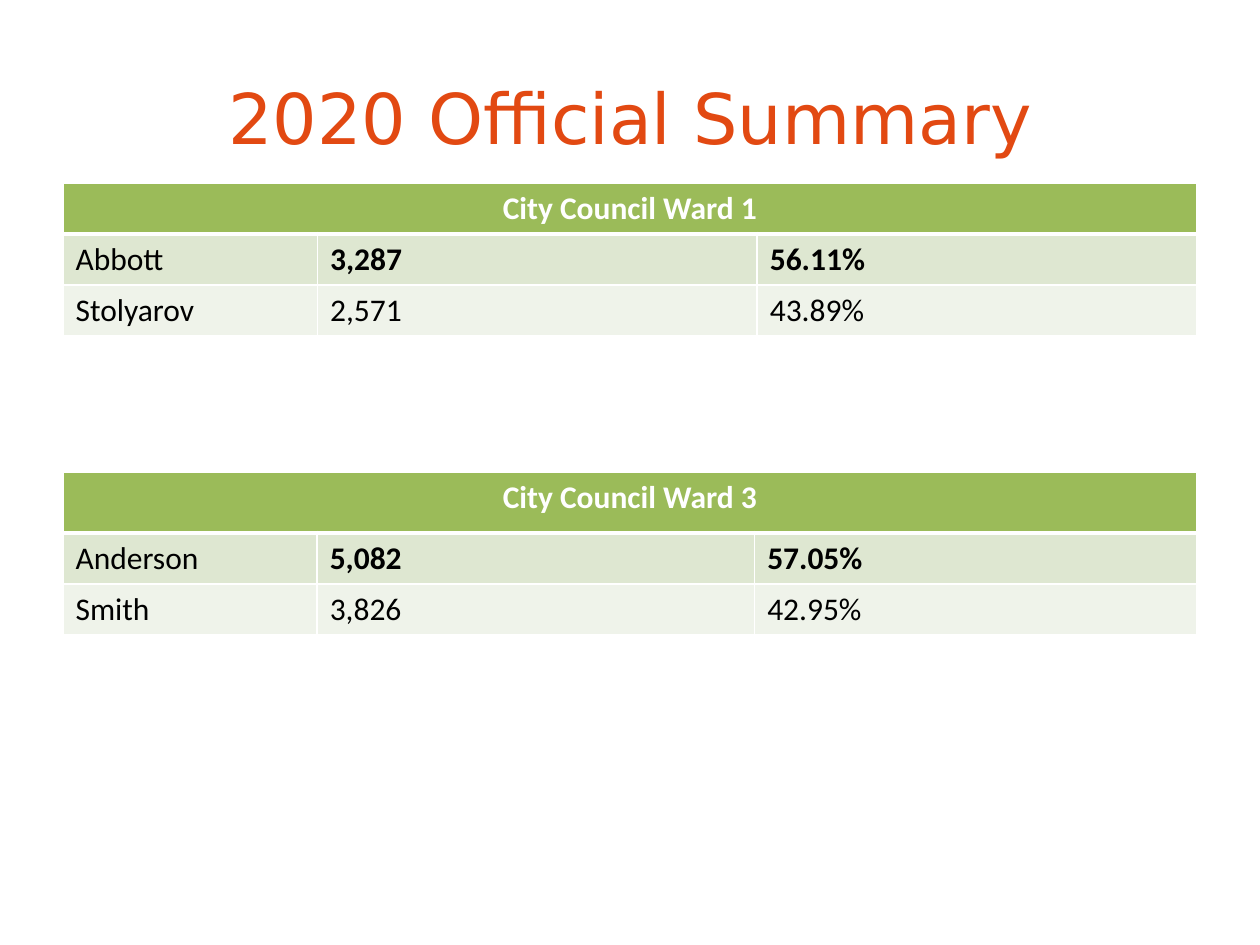
from dataclasses import dataclass

from lxml.etree import SubElement
from pptx import Presentation
from pptx.dml.color import RGBColor
from pptx.enum.text import MSO_ANCHOR, PP_ALIGN
from pptx.oxml.ns import qn
from pptx.util import Pt

WHITE = RGBColor(0xFF, 0xFF, 0xFF)
BLACK = RGBColor(0x00, 0x00, 0x00)
ORANGE = RGBColor(0xE2, 0x49, 0x12)
GREEN = RGBColor(0x9B, 0xBB, 0x59)
BANDS = (RGBColor(0xDE, 0xE7, 0xD1), RGBColor(0xEF, 0xF3, 0xEA))

LEFT, WIDTH = 36, 648
ROW = 29.2
THIN, THICK = 1, 3


@dataclass
class Ward:
    name: str
    top: float
    head: float
    cols: tuple[float, float, float]
    votes: list[tuple[str, str, str]]


WARDS = [
    Ward("City Council Ward 1", 104.5, ROW, (145.5, 251.25, 251.25),
         [("Abbott", "3,287", "56.11%"), ("Stolyarov", "2,571", "43.89%")]),
    Ward("City Council Ward 3", 270, 34.5, (145.25, 250, 252.75),
         [("Anderson", "5,082", "57.05%"), ("Smith", "3,826", "42.95%")]),
]


def write(frame, text: str, *, size: float = 18, font: str = "Calibri",
          color: RGBColor = BLACK, bold: bool = False,
          align: PP_ALIGN = PP_ALIGN.LEFT) -> None:
    para = frame.paragraphs[0]
    para.alignment = align
    run = para.add_run()
    run.text = text
    run.font.size = Pt(size)
    run.font.name = font
    run.font.bold = bold
    run.font.color.rgb = color


def style(cell, fill: RGBColor, top: float = THIN, base: float = THIN) -> None:
    """Give a cell white borders and a solid fill."""
    props = cell._tc.get_or_add_tcPr()
    for side, width in zip("LRTB", (THIN, THIN, top, base)):
        line = SubElement(props, qn(f"a:ln{side}"), w=str(Pt(width)))
        solid = SubElement(line, qn("a:solidFill"))
        SubElement(solid, qn("a:srgbClr"), val=str(WHITE))
    cell.fill.solid()
    cell.fill.fore_color.rgb = fill


def add_ward(slide, ward: Ward) -> None:
    count = len(ward.votes)
    frame = slide.shapes.add_table(
        count + 1, len(ward.cols), Pt(LEFT), Pt(ward.top),
        Pt(WIDTH), Pt(ward.head + count * ROW))
    table = frame.table
    for col, width in zip(table.columns, ward.cols):
        col.width = Pt(width)
    for row, height in zip(table.rows, [ward.head] + [ROW] * count):
        row.height = Pt(height)

    for cell in table.rows[0].cells:
        style(cell, GREEN, base=THICK)
    head = table.cell(0, 0)
    head.merge(table.cell(0, len(ward.cols) - 1))
    write(head.text_frame, ward.name, color=WHITE, bold=True,
          align=PP_ALIGN.CENTER)

    for i, vote in enumerate(ward.votes):
        for j, text in enumerate(vote):
            cell = table.cell(i + 1, j)
            style(cell, BANDS[i % 2], top=THIN if i else THICK)
            write(cell.text_frame, text, bold=i == 0 and j > 0)


def main() -> None:
    deck = Presentation()
    deck.slide_width, deck.slide_height = Pt(720), Pt(540)
    slide = deck.slides.add_slide(deck.slide_layouts[6])

    title = slide.shapes.add_textbox(Pt(LEFT), Pt(21.6), Pt(WIDTH), Pt(90))
    frame = title.text_frame
    frame.word_wrap = True
    frame.vertical_anchor = MSO_ANCHOR.MIDDLE
    write(frame, "2020 Official Summary", size=40, font="DejaVu Sans",
          color=ORANGE, align=PP_ALIGN.CENTER)

    for ward in WARDS:
        add_ward(slide, ward)
    deck.save("out.pptx")


if __name__ == "__main__":
    main()
